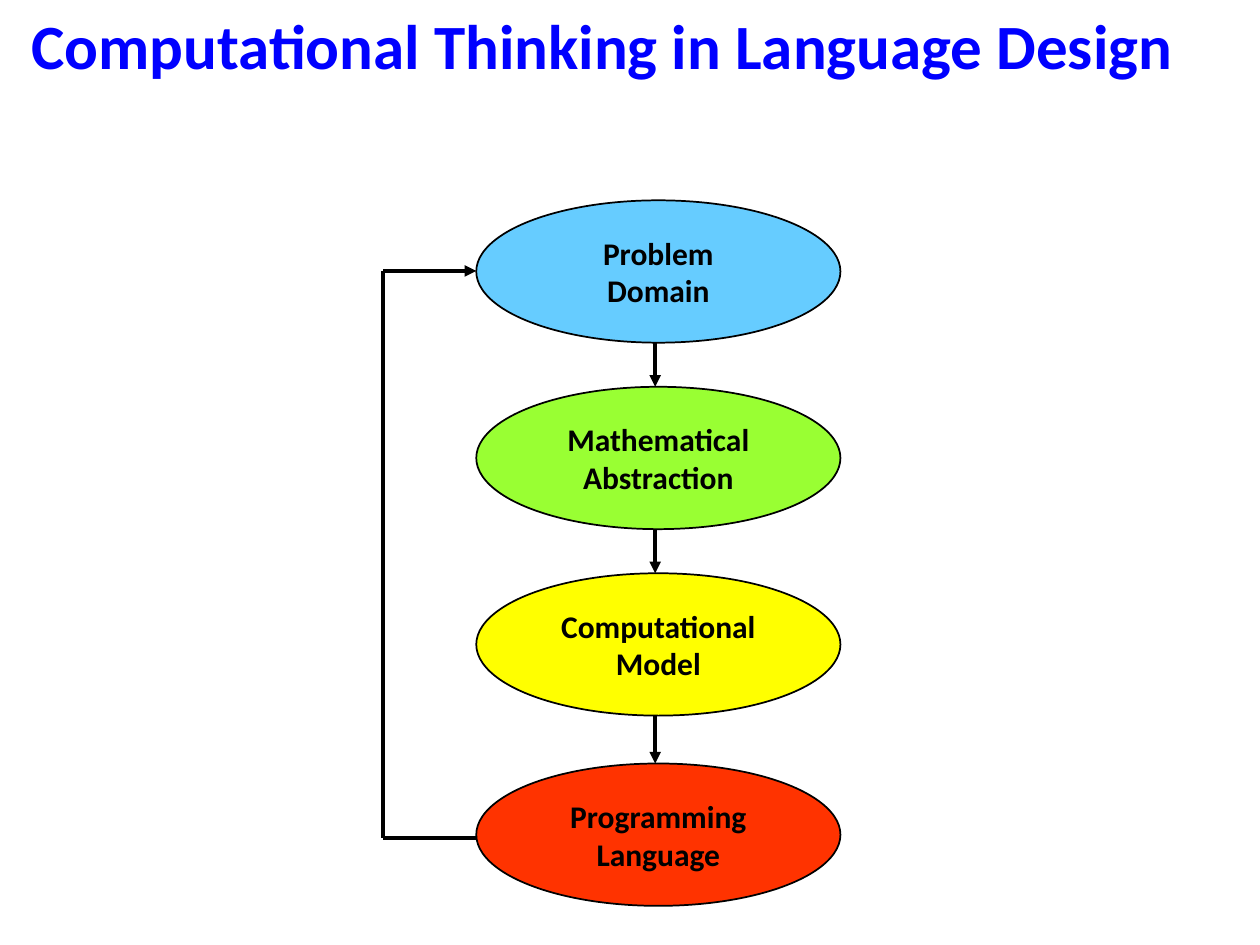
import pptx
import pptx.util
import pptx.dml.color
import pptx.enum.shapes
import pptx.enum.text
import pptx.oxml
from pptx.util import Inches

TITLE = "Computational Thinking in Language Design"
FONT = "Calibri"
BLACK = "000000"

# Words, fill, top edge in inches
STAGES = [
    (("Problem", "Domain"), "66CCFF", 1.59),
    (("Mathematical", "Abstraction"), "99FF33", 3.07),
    (("Computational", "Model"), "FFFF00", 4.55),
    (("Programming", "Language"), "FF3300", 6.06),
]
STAGE_LEFT, STAGE_WIDTH, STAGE_HEIGHT = 3.78, 2.89, 1.13
ARROW_X = 5.2
LOOP_X, LOOP_TOP, LOOP_BOTTOM = 3.04, 2.15, 6.65


def color(hex_value):
    return pptx.dml.color.RGBColor.from_string(hex_value)


def add_text(paragraph, text, size, hex_value):
    run = paragraph.add_run()
    run.text = text
    run.font.name = FONT
    run.font.size = pptx.util.Pt(size)
    run.font.bold = True
    run.font.color.rgb = color(hex_value)


def add_title(slide):
    title = slide.shapes.title
    title.left, title.top = Inches(0.15), Inches(0)
    title.width, title.height = Inches(9.85), Inches(0.71)
    frame = title.text_frame
    frame.auto_size = pptx.enum.text.MSO_AUTO_SIZE.NONE
    frame.vertical_anchor = pptx.enum.text.MSO_ANCHOR.TOP
    frame.paragraphs[0].alignment = pptx.enum.text.PP_ALIGN.LEFT
    add_text(frame.paragraphs[0], TITLE, 36, "0000FF")


def add_stage(slide, words, fill, top):
    stage = slide.shapes.add_shape(
        pptx.enum.shapes.MSO_SHAPE.OVAL,
        Inches(STAGE_LEFT), Inches(top), Inches(STAGE_WIDTH), Inches(STAGE_HEIGHT))
    stage.shadow.inherit = False
    stage.fill.solid()
    stage.fill.fore_color.rgb = color(fill)
    stage.line.color.rgb = color(BLACK)
    stage.line.width = pptx.util.Pt(1)
    frame = stage.text_frame
    frame.word_wrap = False
    frame.vertical_anchor = pptx.enum.text.MSO_ANCHOR.MIDDLE
    for index, word in enumerate(words):
        paragraph = frame.add_paragraph() if index else frame.paragraphs[0]
        paragraph.alignment = pptx.enum.text.PP_ALIGN.CENTER
        add_text(paragraph, word, 18, BLACK)


def add_line(slide, start, end, arrow=False):
    line = slide.shapes.add_connector(
        pptx.enum.shapes.MSO_CONNECTOR.STRAIGHT,
        *(Inches(value) for value in start + end))
    line.line.color.rgb = color(BLACK)
    line.line.width = pptx.util.Pt(2.25)
    if arrow:
        tail = pptx.oxml.ns.qn("a:tailEnd")
        line.line._get_or_add_ln().makeelement(tail)
        pptx.oxml.xmlchemy.OxmlElement("a:tailEnd")
        head = pptx.oxml.xmlchemy.OxmlElement("a:tailEnd")
        head.set("type", "triangle")
        line.line._get_or_add_ln().append(head)
    line._element.spPr.append(pptx.oxml.xmlchemy.OxmlElement("a:effectLst"))


def main():
    presentation = pptx.Presentation()
    presentation.slide_width, presentation.slide_height = Inches(10), Inches(7.5)
    slide = presentation.slides.add_slide(presentation.slide_layouts[5])
    add_title(slide)
    for words, fill, top in STAGES:
        add_stage(slide, words, fill, top)

    tops = [top for _, _, top in STAGES]
    for top, next_top in zip(tops, tops[1:]):
        add_line(slide, (ARROW_X, top + STAGE_HEIGHT), (ARROW_X, next_top), arrow=True)

    loop = [(STAGE_LEFT, LOOP_BOTTOM), (LOOP_X, LOOP_BOTTOM),
            (LOOP_X, LOOP_TOP), (STAGE_LEFT, LOOP_TOP)]
    for start, end in zip(loop, loop[1:]):
        add_line(slide, start, end, arrow=end == loop[-1])
    presentation.save("out.pptx")


if __name__ == "__main__":
    main()
